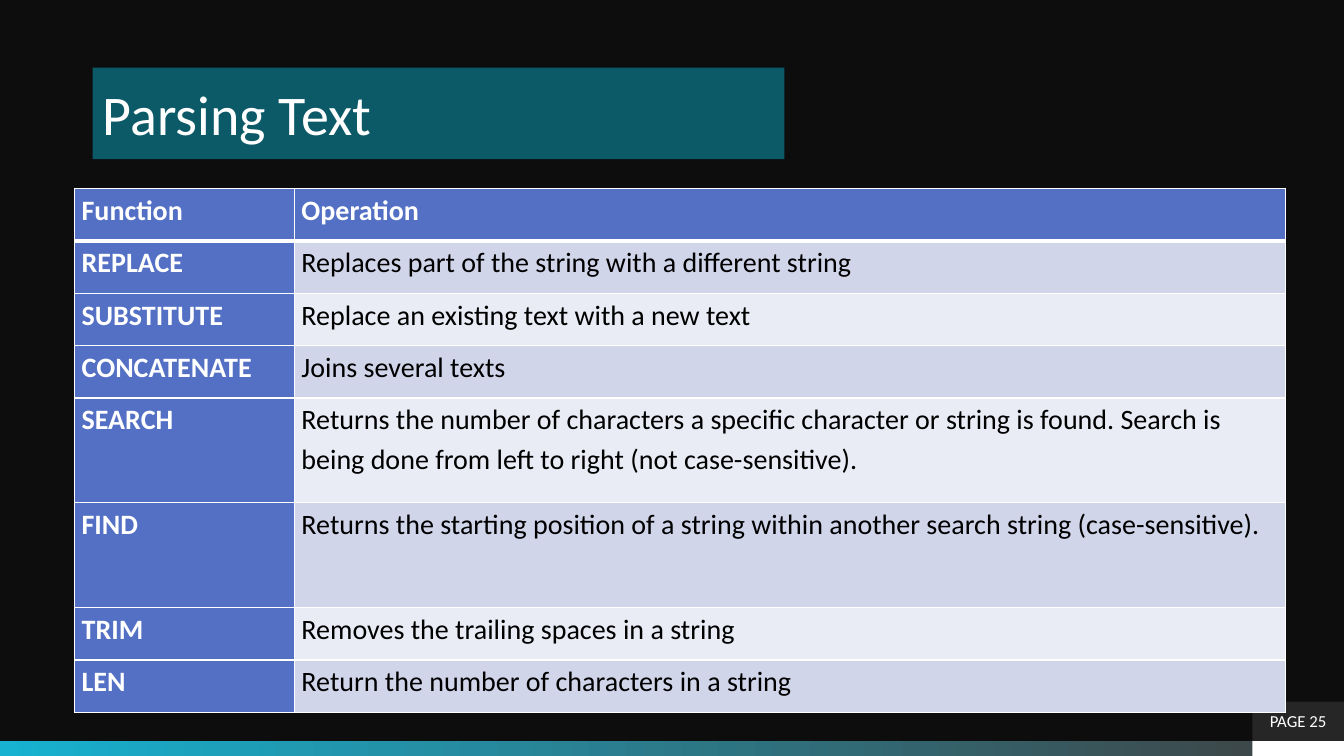
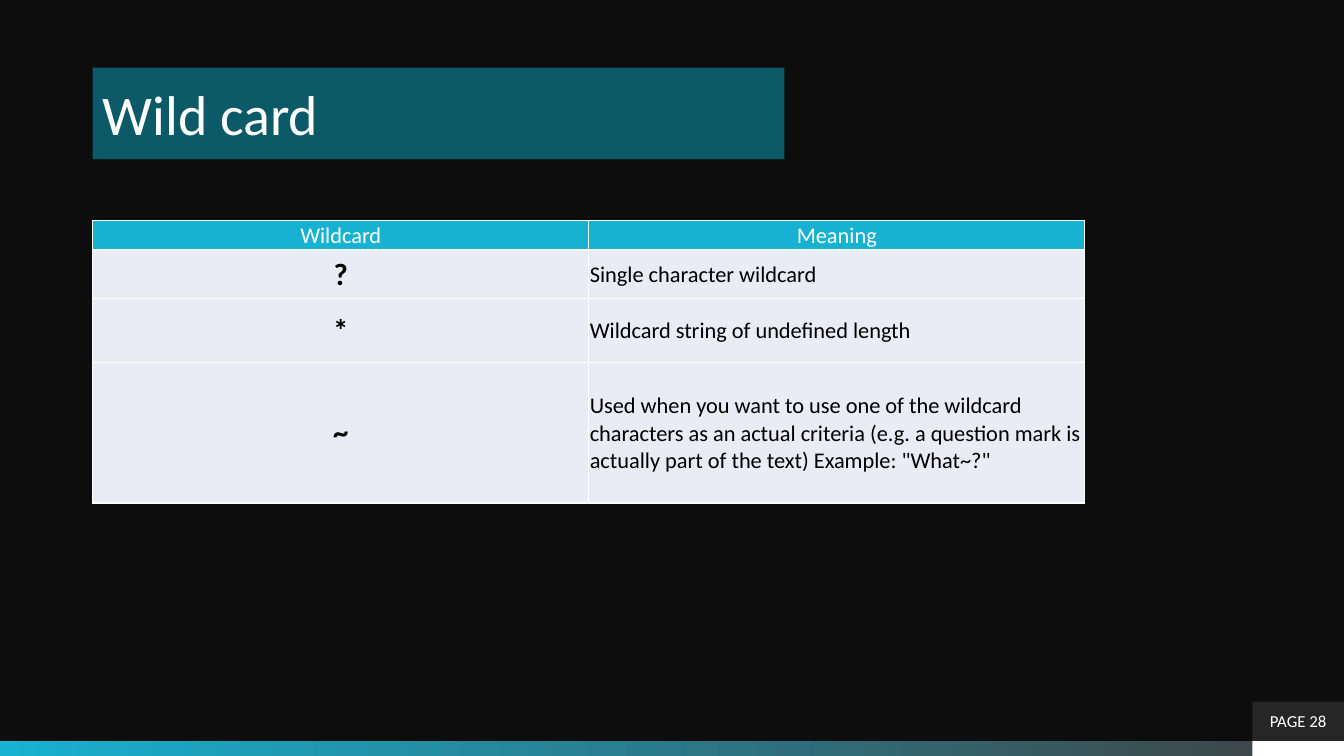
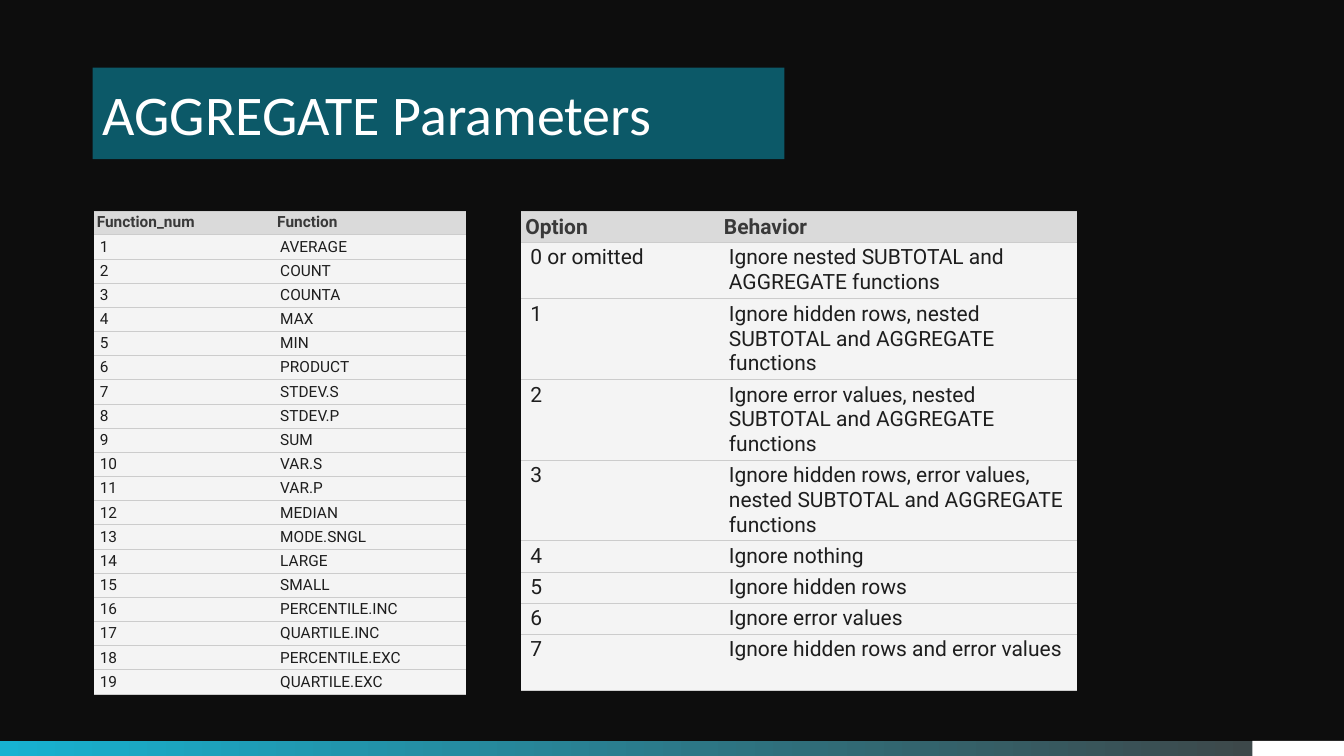
from dataclasses import dataclass
from typing import Optional

from lxml.etree import SubElement as Sub
from pptx import Presentation
from pptx.dml.color import RGBColor as Rgb
from pptx.enum.shapes import MSO_SHAPE as Shape
from pptx.enum.text import MSO_ANCHOR as Anchor, PP_ALIGN as Align
from pptx.oxml.ns import qn
from pptx.util import Inches, Pt


@dataclass(frozen=True)
class Theme:
    back: str = "0D0D0D"
    white: str = "FFFFFF"
    black: str = "000000"
    teal: str = "0C5968"
    cyan: str = "17B2D1"
    gray: str = "404040"
    dark: str = "262626"
    blue: str = "5370C5"
    deep: str = "D1D5EA"
    pale: str = "E9EBF5"
    rule: str = "CCCCCC"
    top: str = "DADADA"
    body: str = "F4F4F4"
    bold: str = "393939"
    ink: str = "1E1E1E"
    sans: str = "Calibri"
    web: str = "Roboto"
    title: int = 40
    page: int = 12
    large: int = 20
    mark: int = 22
    note: int = 16
    small: int = 11
    mid: int = 15


T = Theme()
WIDE, HIGH = 13.33, 7.5
FOOT = 7.35
TAB = 12.42
NO_STYLE = "{2D5ABB26-0587-4C30-8999-92F81FD0307C}"


@dataclass(frozen=True)
class Box:
    left: float
    top: float
    width: float
    height: float


@dataclass(frozen=True)
class Type:
    face: str
    size: int
    color: str
    bold: bool = False
    align: Align = Align.LEFT
    space: float = 1.0


@dataclass(frozen=True)
class Look:
    type: Type
    fills: tuple[str, ...]
    inset: tuple[float, float, float, float]
    anchor: Anchor = Anchor.TOP


@dataclass(frozen=True)
class Edge:
    color: str
    width: float
    sides: str
    under: float


@dataclass(frozen=True)
class Grid:
    left: float
    top: float
    cols: tuple[float, ...]
    rows: tuple[float, ...]
    head: Look
    looks: tuple[Look, Look]
    edge: Edge
    cells: list[tuple[str, str]]


@dataclass(frozen=True)
class Page:
    title: str
    grids: tuple[Grid, ...]
    number: Optional[int] = None


def style(para, kind: Type) -> None:
    para.alignment = kind.align
    para.line_spacing = kind.space
    font = para.font
    font.name, font.size, font.bold = kind.face, Pt(kind.size), kind.bold
    font.color.rgb = Rgb.from_string(kind.color)


def pad(item, inset: tuple[float, float, float, float]) -> None:
    (item.margin_left, item.margin_top,
     item.margin_right, item.margin_bottom) = map(Inches, inset)


def draw_box(slide, box: Box, fill: str):
    shape = slide.shapes.add_shape(
        Shape.RECTANGLE, Inches(box.left), Inches(box.top),
        Inches(box.width), Inches(box.height))
    shape.shadow.inherit = False
    shape.line.fill.background()
    shape.fill.solid()
    shape.fill.fore_color.rgb = Rgb.from_string(fill)
    return shape


def draw_label(slide, box: Box, fill: str, text: str, kind: Type,
               inset: tuple[float, float, float, float]) -> None:
    frame = draw_box(slide, box, fill).text_frame
    frame.word_wrap = True
    frame.vertical_anchor = Anchor.MIDDLE
    pad(frame, inset)
    frame.text = text
    style(frame.paragraphs[0], kind)


def draw_band(slide) -> None:
    band = draw_box(slide, Box(0, FOOT, WIDE, HIGH - FOOT), T.cyan)
    band.fill.gradient()
    band.fill.gradient_angle = 0
    for stop, color in zip(band.fill.gradient_stops, (T.cyan, T.gray)):
        stop.color.rgb = Rgb.from_string(color)
    draw_box(slide, Box(TAB, FOOT, WIDE - TAB, HIGH - FOOT), T.white)


def draw_edge(cell, edge: Edge, row: int) -> None:
    props = cell._tc.get_or_add_tcPr()
    for side in "LRTB":
        heavy = (side, row) in (("B", 0), ("T", 1))
        width = edge.under if heavy else edge.width
        line = Sub(props, qn(f"a:ln{side}"), w=str(Pt(width)))
        if side in edge.sides:
            Sub(Sub(line, qn("a:solidFill")), qn("a:srgbClr"), val=edge.color)
        else:
            Sub(line, qn("a:noFill"))


def draw_cell(cell, text: str, look: Look, edge: Edge, row: int) -> None:
    draw_edge(cell, edge, row)
    cell.fill.solid()
    fill = look.fills[(row - 1) % len(look.fills)]
    cell.fill.fore_color.rgb = Rgb.from_string(fill)
    cell.vertical_anchor = look.anchor
    pad(cell, look.inset)
    cell.text = text
    style(cell.text_frame.paragraphs[0], look.type)


def draw_grid(slide, grid: Grid) -> None:
    table = slide.shapes.add_table(
        len(grid.rows), len(grid.cols), Inches(grid.left), Inches(grid.top),
        Inches(sum(grid.cols)), Inches(sum(grid.rows))).table
    table.first_row = table.horz_banding = False
    table._tbl.tblPr.find(qn("a:tableStyleId")).text = NO_STYLE
    for col, width in zip(table.columns, grid.cols):
        col.width = Inches(width)
    for row, height in zip(table.rows, grid.rows):
        row.height = Inches(height)
    for row, texts in enumerate(grid.cells):
        for col, text in enumerate(texts):
            look = grid.looks[col] if row else grid.head
            draw_cell(table.cell(row, col), text, look, grid.edge, row)


def draw_page(deck, page: Page) -> None:
    slide = deck.slides.add_slide(deck.slide_layouts[6])
    slide.background.fill.solid()
    slide.background.fill.fore_color.rgb = Rgb.from_string(T.back)
    draw_band(slide)
    draw_label(slide, Box(0.92, 0.67, 6.86, 0.91), T.teal, page.title,
               Type(T.sans, T.title, T.white), (0.1, 0.12, 0.1, 0.12))
    if page.number:
        draw_label(slide, Box(TAB, 6.96, WIDE - TAB, FOOT - 6.96), T.dark,
                   f"PAGE {page.number}",
                   Type(T.sans, T.page, T.white, align=Align.CENTER),
                   (0.1, 0.05, 0.1, 0.05))
    for grid in page.grids:
        draw_grid(slide, grid)


def text_grid() -> Grid:
    inset = (0.07, 0, 0.07, 0)
    key = Look(Type(T.sans, T.large, T.white, True, space=1.15),
               (T.blue,), inset)
    body = Look(Type(T.sans, T.large, T.black, space=1.15),
                (T.deep, T.pale), inset)
    row = 0.52
    return Grid(
        0.74, 1.87, (2.18, 9.83),
        (row,) * 4 + (2 * row,) * 2 + (row,) * 2,
        key, (key, body), Edge(T.white, 1, "LRTB", 3), [
            ("Function", "Operation"),
            ("REPLACE", "Replaces part of the string with a different string"),
            ("SUBSTITUTE", "Replace an existing text with a new text"),
            ("CONCATENATE", "Joins several texts"),
            ("SEARCH", "Returns the number of characters a specific character "
             "or string is found. Search is being done from left to right "
             "(not case-sensitive)."),
            ("FIND", "Returns the starting position of a string within "
             "another search string (case-sensitive)."),
            ("TRIM", "Removes the trailing spaces in a string"),
            ("LEN", "Return the number of characters in a string"),
        ])


def wild_grid() -> Grid:
    inset = (0.01, 0.01, 0.01, 0)
    head = Look(Type(T.sans, T.note, T.white, align=Align.CENTER),
                (T.cyan,), inset, Anchor.BOTTOM)
    mark = Look(Type(T.sans, T.mark, T.black, True, Align.CENTER),
                (T.pale,), inset, Anchor.MIDDLE)
    note = Look(Type(T.sans, T.note, T.black),
                (T.pale,), inset, Anchor.MIDDLE)
    return Grid(
        0.92, 2.19, (4.92, 4.92), (0.29, 0.48, 0.64, 1.39),
        head, (mark, note), Edge(T.white, 1, "LRTB", 1), [
            ("Wildcard", "Meaning"),
            ("?", "Single character wildcard"),
            ("*", "Wildcard string of undefined length"),
            ("~", "Used when you want to use one of the wildcard characters "
             "as an actual criteria (e.g. a question mark is actually part "
             "of the text) Example: \"What~?\""),
        ])


def web_grid(left: float, cols: tuple[float, ...], rows: tuple[float, ...],
             size: int, head: tuple[float, float, float, float],
             inset: tuple[float, float, float, float],
             cells: list[tuple[str, str]]) -> Grid:
    top = Look(Type(T.web, size, T.bold, True), (T.top,), head)
    body = Look(Type(T.web, size, T.ink), (T.body,), inset)
    return Grid(left, 2.1, cols, rows, top, (body, body),
                Edge(T.rule, 0.75, "TB", 0.75), cells)


def code_grid() -> Grid:
    names = ("AVERAGE COUNT COUNTA MAX MIN PRODUCT STDEV.S STDEV.P SUM VAR.S "
             "VAR.P MEDIAN MODE.SNGL LARGE SMALL PERCENTILE.INC QUARTILE.INC "
             "PERCENTILE.EXC QUARTILE.EXC").split()
    cells = [(str(code), name) for code, name in enumerate(names, 1)]
    return web_grid(
        0.93, (1.79, 1.9), (0.23,) + (0.24,) * len(names), T.small,
        (0.03, 0.02, 0.06, 0.02), (0.06, 0.03, 0.06, 0.03),
        [("Function_num", "Function")] + cells)


def option_grid() -> Grid:
    nested = "nested SUBTOTAL and AGGREGATE functions"
    acts = (f"hidden rows, {nested}", f"error values, {nested}",
            f"hidden rows, error values, {nested}", "nothing",
            "hidden rows", "error values", "hidden rows and error values")
    cells = [(str(code), f"Ignore {act}") for code, act in enumerate(acts, 1)]
    return web_grid(
        5.17, (1.97, 3.54),
        (0.3, 0.56) + (0.8,) * 3 + (0.31,) * 3 + (0.56,), T.mid,
        (0.04, 0.03, 0.09, 0.03), (0.09, 0.03, 0.09, 0.03),
        [("Option", "Behavior"), ("0 or omitted", f"Ignore {nested}")] + cells)


def main() -> None:
    deck = Presentation()
    deck.slide_width, deck.slide_height = Inches(WIDE), Inches(HIGH)
    for page in (
        Page("Parsing Text", (text_grid(),), 25),
        Page("Wild card", (wild_grid(),), 28),
        Page("AGGREGATE Parameters", (code_grid(), option_grid())),
    ):
        draw_page(deck, page)
    deck.save("out.pptx")


if __name__ == "__main__":
    main()
